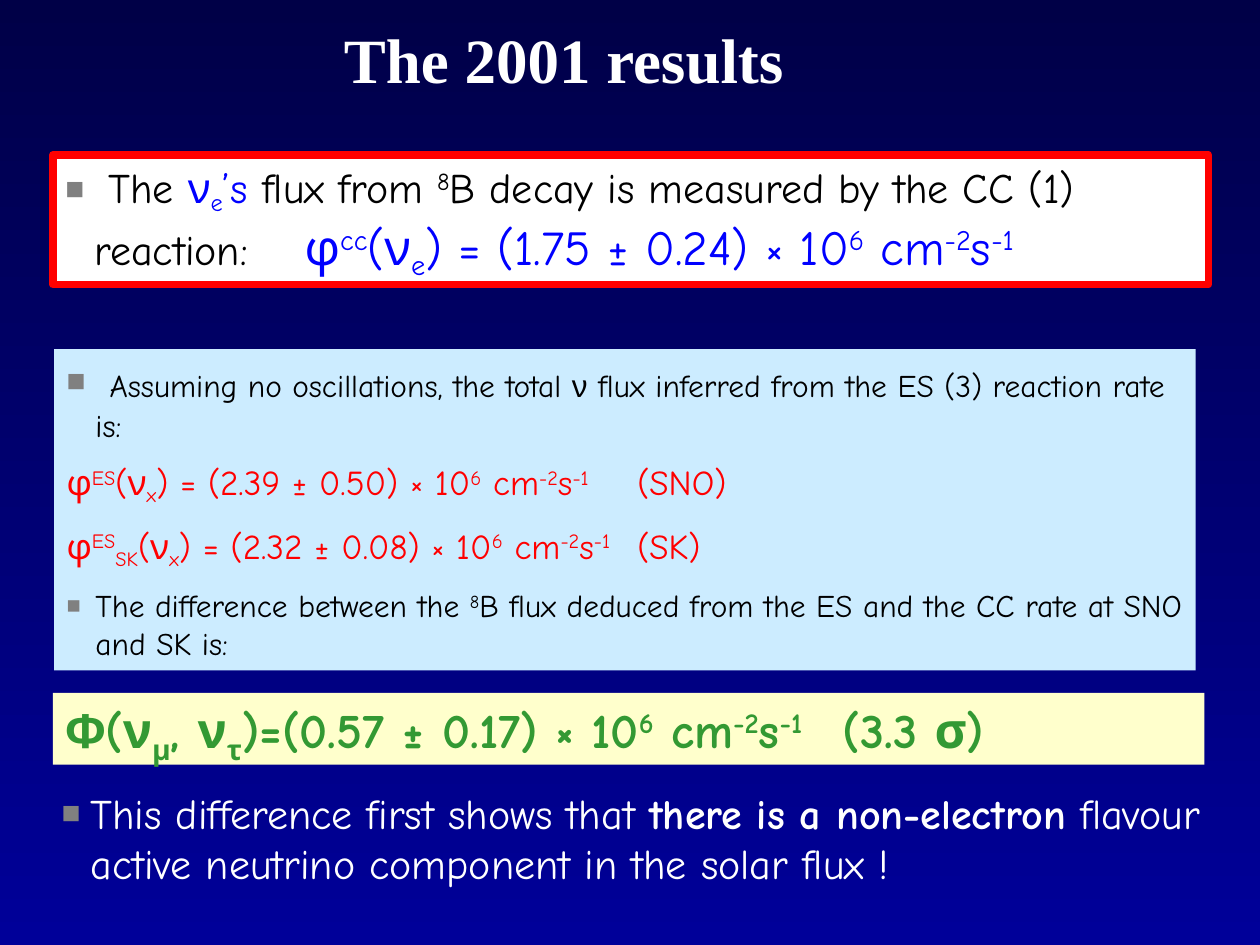
import collections

import pptx
import pptx.dml.color
import pptx.enum.shapes
import pptx.enum.text
import pptx.oxml.ns
import pptx.oxml.xmlchemy
import pptx.util
from lxml import etree

RGBColor = pptx.dml.color.RGBColor
Inches = pptx.util.Inches
WHITE = RGBColor(0xFF, 0xFF, 0xFF)
BLACK = RGBColor(0x00, 0x00, 0x00)
BLUE = RGBColor(0x00, 0x00, 0xFF)
RED = RGBColor(0xFF, 0x00, 0x00)
GREEN = RGBColor(0x33, 0x99, 0x33)
GREY = RGBColor(0x80, 0x80, 0x80)
PALE_BLUE = RGBColor(0xCC, 0xEC, 0xFF)
PALE_YELLOW = RGBColor(0xFF, 0xFF, 0xCC)
NAVY_TOP = RGBColor(0x00, 0x00, 0x47)
NAVY_BOTTOM = RGBColor(0x00, 0x00, 0x99)

Style = collections.namedtuple(
    "Style", "size color bold font subscript", defaults=(False, "Comic Neue", -20)
)
Paragraph = collections.namedtuple("Paragraph", "runs bullet before tab", defaults=(False, 50, None))
Box = collections.namedtuple("Box", "position paragraphs fill line", defaults=(None, None))

TITLE = Style(36, WHITE, True, "Times New Roman")
LEAD = Style(24, BLACK)
LEAD_BLUE = Style(24, BLUE)
RESULT_BLUE = Style(28, BLUE)
BODY = Style(18, BLACK)
BODY_GREEK = Style(18, BLACK, font="Arial")
RATE = Style(20, RED)
TOTAL_GREEK = Style(28, GREEN, True, "Arial")
TOTAL = Style(28, GREEN, True, subscript=-25)
CLOSING = Style(24, WHITE)
CLOSING_BOLD = Style(24, WHITE, True)

UNITS = "× 10|^6| cm|^-2|s|^-1"
HANGING = 0.23
INSET = 0.1

TITLE_BOX = Box((2.14, 0.17, 4.67, 0.58), [Paragraph([(TITLE, "The 2001 results")], before=0)])
BOXES = [
    Box(
        (0.42, 1.23, 9.17, 1.03),
        [
            Paragraph(
                [
                    (LEAD, " The "),
                    (LEAD_BLUE, "ν|_e|’s "),
                    (LEAD, "flux from |^8|B decay is measured by the CC (1) reaction:\t"),
                    (RESULT_BLUE, "φ|^cc|(ν|_e|) = (1.75 ± 0.24) " + UNITS),
                ],
                bullet=True,
                tab=1.9,
            )
        ],
        WHITE,
        RED,
    ),
    Box(
        (0.42, 5.5, 9.14, 0.57),
        [
            Paragraph(
                [
                    (TOTAL_GREEK, "Φ"),
                    (TOTAL, "(ν|_μ|, ν|_τ|)=(0.57 ± 0.17) " + UNITS + "|\t(3.3 σ)"),
                ],
                before=20,
                tab=6.17,
            )
        ],
        PALE_YELLOW,
    ),
    Box(
        (0.39, 6.2, 9.42, 0.9),
        [
            Paragraph(
                [
                    (CLOSING, "This difference first shows that "),
                    (CLOSING_BOLD, "there is a non-electron"),
                    (CLOSING, " flavour active neutrino component in the solar flux !"),
                ],
                bullet=True,
            )
        ],
    ),
    Box(
        (0.43, 2.77, 9.06, 2.55),
        [
            Paragraph(
                [
                    (LEAD, " "),
                    (BODY, "Assuming no oscillations, the total "),
                    (BODY_GREEK, "ν"),
                    (BODY, " flux inferred from the ES (3) reaction rate is:"),
                ],
                bullet=True,
            ),
            Paragraph([(RATE, "φ|^ES|(ν|_x|) = (2.39 ± 0.50) " + UNITS + "|\t(SNO)")], tab=4.53),
            Paragraph([(RATE, "φ|^ES|_SK|(ν|_x|) = (2.32 ± 0.08) " + UNITS + "|\t(SK)")], tab=4.53),
            Paragraph(
                [(BODY, "The difference between the |^8|B flux deduced from the ES and the CC rate at SNO and SK is:")],
                bullet=True,
            ),
        ],
        PALE_BLUE,
    ),
]


def add_element(parent, tag, **attributes):
    return etree.SubElement(parent, pptx.oxml.ns.qn(tag), attributes)


def format_paragraph(paragraph, content):
    properties = paragraph._p.get_or_add_pPr()
    spacing = add_element(properties, "a:spcBef")
    add_element(spacing, "a:spcPct", val=str(content.before * 1000))
    if content.bullet:
        properties.set("marL", str(Inches(HANGING)))
        properties.set("indent", str(-Inches(HANGING)))
        color = add_element(properties, "a:buClr")
        add_element(color, "a:srgbClr", val=str(GREY))
        add_element(properties, "a:buSzPct", val="75000")
        add_element(properties, "a:buFont", typeface="Arial")
        add_element(properties, "a:buChar", char="■")
    if content.tab:
        tabs = add_element(properties, "a:tabLst")
        add_element(tabs, "a:tab", pos=str(Inches(content.tab)), algn="l")


def add_runs(paragraph, style, marked_text):
    baselines = {"^": 30, "_": style.subscript}
    for piece in marked_text.split("|"):
        run = paragraph.add_run()
        run.text = piece.lstrip("^_")
        font = run.font
        font.size = pptx.util.Pt(style.size)
        font.name = style.font
        font.bold = style.bold
        font.color.rgb = style.color
        if piece[0] in baselines:
            run._r.get_or_add_rPr().set("baseline", str(baselines[piece[0]] * 1000))


def add_box(slide, box):
    position = [Inches(value) for value in box.position]
    if box.fill is None:
        shape = slide.shapes.add_textbox(*position)
    else:
        shape = slide.shapes.add_shape(pptx.enum.shapes.MSO_SHAPE.RECTANGLE, *position)
        shape.shadow.inherit = False
        shape.fill.solid()
        shape.fill.fore_color.rgb = box.fill
        if box.line is None:
            shape.line.fill.background()
        else:
            shape.line.color.rgb = box.line
            shape.line.width = pptx.util.Pt(4.25)
    frame = shape.text_frame
    frame.word_wrap = True
    frame.auto_size = pptx.enum.text.MSO_AUTO_SIZE.SHAPE_TO_FIT_TEXT
    frame.vertical_anchor = pptx.enum.text.MSO_ANCHOR.TOP
    frame.margin_left = frame.margin_right = Inches(INSET)
    for index, content in enumerate(box.paragraphs):
        paragraph = frame.add_paragraph() if index else frame.paragraphs[0]
        paragraph.alignment = pptx.enum.text.PP_ALIGN.LEFT
        format_paragraph(paragraph, content)
        for style, marked_text in content.runs:
            add_runs(paragraph, style, marked_text)
    return frame


def main():
    presentation = pptx.Presentation()
    presentation.slide_width = Inches(10)
    presentation.slide_height = Inches(7.5)
    slide = presentation.slides.add_slide(presentation.slide_layouts[6])
    background = slide.background.fill
    background.gradient()
    background.gradient_angle = 270
    for stop, color in zip(background.gradient_stops, (NAVY_TOP, NAVY_BOTTOM)):
        stop.color.rgb = color
    title = add_box(slide, TITLE_BOX)
    title.auto_size = pptx.enum.text.MSO_AUTO_SIZE.NONE
    title.vertical_anchor = pptx.enum.text.MSO_ANCHOR.MIDDLE
    title.paragraphs[0].alignment = pptx.enum.text.PP_ALIGN.CENTER
    for box in BOXES:
        add_box(slide, box)
    presentation.save("out.pptx")


if __name__ == "__main__":
    main()
